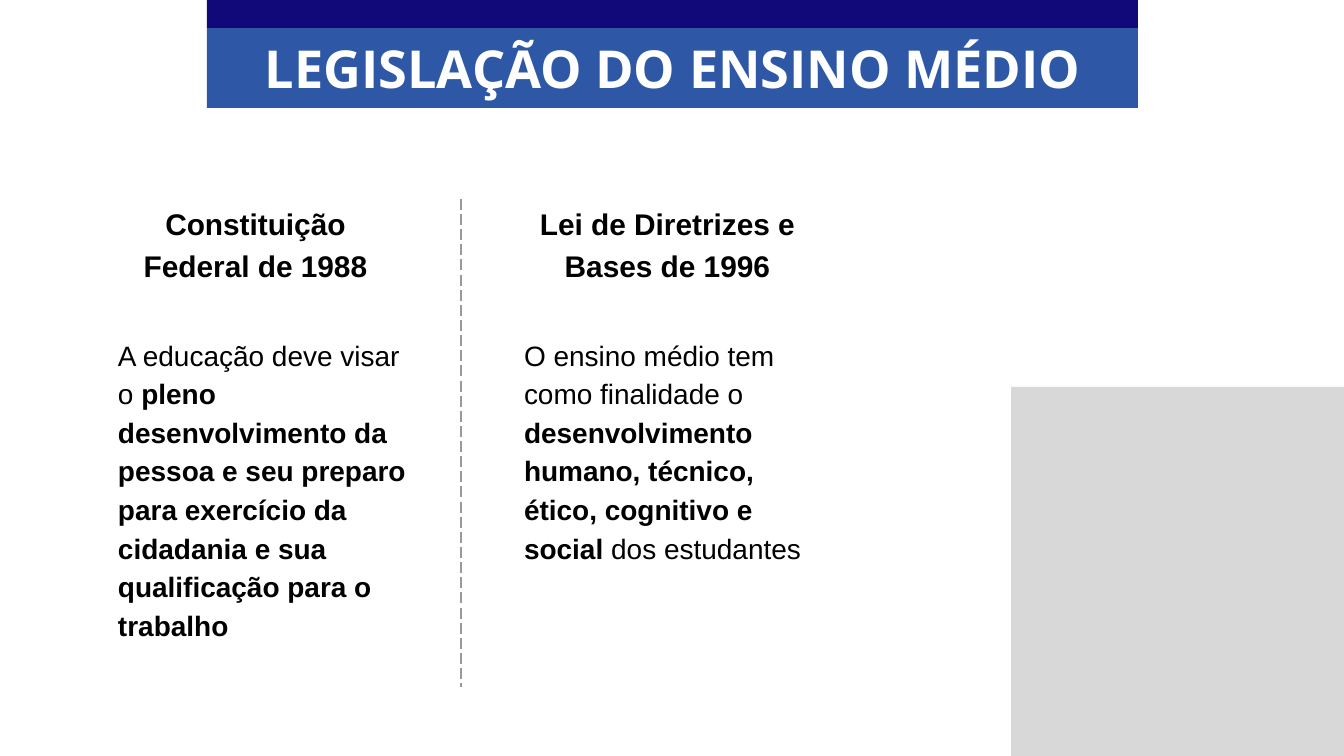
from pptx import Presentation
from pptx import util as u
from pptx.dml.color import RGBColor
from pptx.enum import dml, shapes, text
from pptx.oxml.ns import qn
from lxml import etree

PX = u.Inches(10) / 1344
COLORS = {
    "navy": "110979", "blue": "2E58A6", "white": "FFFFFF",
    "black": "000000", "divider": "999999", "panel": "BFBFBF",
}
TITLE = {"name": "Open Sans", "size": u.Pt(28), "bold": True}
HEADING = {"name": "Arial", "size": u.Pt(16), "bold": True}
BODY = {"name": "Arial", "size": u.Pt(15), "bold": False}
HEADING_SPACING = {"line_spacing": 1.15, "space_before": u.Pt(0)}
BODY_SPACING = {**HEADING_SPACING, "space_after": u.Pt(10)}

COLUMNS = [
    {"box": (99, 199, 313), "body_offset": 6, "body_size": (321, 335),
     "heading": "Constituição Federal de 1988",
     "runs": [("A educação deve visar o ", False),
              ("pleno desenvolvimento da pessoa e seu preparo para exercício "
               "da cidadania e sua qualificação para o trabalho", True)]},
    {"box": (511, 199, 313), "body_offset": 0, "body_size": (313, 257),
     "heading": "Lei de Diretrizes e Bases de 1996",
     "runs": [("O ensino médio tem como finalidade o ", False),
              ("desenvolvimento humano, técnico, ético, cognitivo e social ", True),
              ("dos estudantes", False)]},
]


def px(value):
    return u.Emu(round(value * PX))


def rgb(name):
    return RGBColor.from_string(COLORS[name])


def set_all(target, values):
    for name, value in values.items():
        setattr(target, name, value)


def place(shape, left, top, width, height):
    set_all(shape, {"left": px(left), "top": px(top),
                    "width": px(width), "height": px(height)})


def add_block(slide, color, *box):
    block = slide.shapes.add_shape(shapes.MSO_SHAPE.RECTANGLE, *map(px, box))
    block.shadow.inherit = False
    block.fill.solid()
    block.fill.fore_color.rgb = rgb(color)
    block.line.fill.background()
    return block


def write(shape, runs, font, color, align, anchor, insets, spacing):
    """Fill a placeholder with one unbulleted paragraph of (text, bold) runs."""
    frame = shape.text_frame
    across, down = map(px, insets)
    set_all(frame, {
        "word_wrap": True, "auto_size": text.MSO_AUTO_SIZE.NONE,
        "vertical_anchor": anchor,
        "margin_left": across, "margin_right": across,
        "margin_top": down, "margin_bottom": down,
    })
    paragraph = frame.paragraphs[0]
    set_all(paragraph, {"alignment": align, **spacing})
    properties = paragraph._p.get_or_add_pPr()
    properties.set("marL", "0")
    properties.set("indent", "0")
    etree.SubElement(properties, qn("a:buNone"))
    for words, bold in runs:
        run = paragraph.add_run()
        run.text = words
        set_all(run.font, {**font, "bold": bold})
        run.font.color.rgb = rgb(color)


def add_banner(slide, left, top, width):
    add_block(slide, "blue", left, top + 28, width, 80)
    add_block(slide, "navy", left, top, width, 28)
    title = slide.shapes.title
    place(title, left, top + 29, width, 77)
    write(title, [("LEGISLAÇÃO DO ENSINO MÉDIO", True)], TITLE, "white",
          text.PP_ALIGN.CENTER, text.MSO_ANCHOR.TOP, (13, 7),
          {"space_before": u.Pt(0)})
    # The title must lie in front of the two bands.
    title.element.getparent().append(title.element)


def add_column(heading, body, column):
    left, top, width = column["box"]
    place(body, left + column["body_offset"], top + 121, *column["body_size"])
    write(body, column["runs"], BODY, "black", text.PP_ALIGN.LEFT,
          text.MSO_ANCHOR.TOP, (13, 13), BODY_SPACING)
    place(heading, left, top, width, 86)
    heading.fill.solid()
    heading.fill.fore_color.rgb = rgb("white")
    heading.line.color.rgb = rgb("white")
    heading.line.width = u.Pt(0.75)
    write(heading, [(column["heading"], True)], HEADING, "black",
          text.PP_ALIGN.CENTER, text.MSO_ANCHOR.MIDDLE, (13, 13),
          HEADING_SPACING)


def add_divider(slide, x, top, bottom):
    divider = slide.shapes.add_connector(
        shapes.MSO_CONNECTOR.STRAIGHT, px(x), px(top), px(x), px(bottom))
    divider.line.color.rgb = rgb("divider")
    divider.line.width = u.Pt(0.75)
    divider.line.dash_style = dml.MSO_LINE.LONG_DASH
    etree.SubElement(divider.element.spPr, qn("a:effectLst"))


def add_panel(slide, *box):
    """Add the translucent grey area in the corner."""
    panel = add_block(slide, "panel", *box)
    color = panel.element.spPr.find(qn("a:solidFill"))[0]
    etree.SubElement(color, qn("a:alpha"), val="60000")


def main():
    presentation = Presentation()
    presentation.slide_width, presentation.slide_height = px(1344), px(756)
    comparison = presentation.slide_layouts.get_by_name("Comparison")
    slide = presentation.slides.add_slide(comparison)
    add_banner(slide, 207, 0, 931)
    placeholders = {item.placeholder_format.idx: item for item in slide.placeholders}
    for column, (heading, body) in zip(COLUMNS, [(1, 2), (3, 4)]):
        add_column(placeholders[heading], placeholders[body], column)
    add_divider(slide, 461, 199, 687)
    add_panel(slide, 1011, 387, 333, 378)
    presentation.save("out.pptx")


if __name__ == "__main__":
    main()
